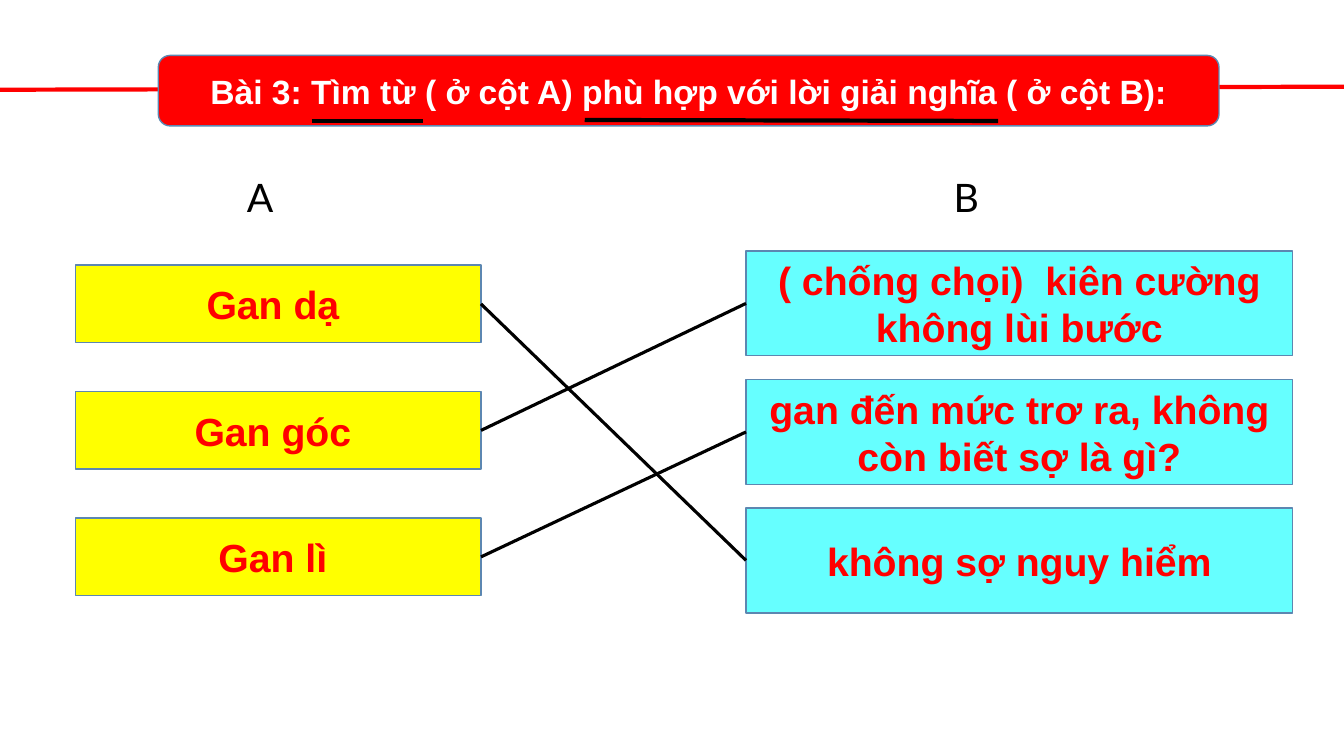
from lxml import etree
from pptx import Presentation
from pptx.dml.color import RGBColor
from pptx.enum.shapes import MSO_CONNECTOR as CONN, MSO_SHAPE as SHAPE
from pptx.enum.text import MSO_ANCHOR as ANCHOR, PP_ALIGN as ALIGN
from pptx.oxml.ns import qn
from pptx.util import Inches, Pt

RED, YELLOW, CYAN = "FF0000", "FFFF00", "66FFFF"
BLACK, WHITE, BORDER = "000000", "FFFFFF", "5C87B1"
RIGHT_SIDE, LEFT_SIDE = 3, 1


def rgb(value):
    return RGBColor.from_string(value)


class Board:
    """Draws on one slide; lengths are percentages of its width and height."""

    def __init__(self, prs):
        self.width, self.height = prs.slide_width, prs.slide_height
        self.shapes = prs.slides.add_slide(prs.slide_layouts[6]).shapes

    def x(self, share):
        return round(self.width * share / 100)

    def y(self, share):
        return round(self.height * share / 100)

    def area(self, left, top, width, height):
        return self.x(left), self.y(top), self.x(width), self.y(height)

    def set_text(self, sp, text, size, color, font="Arial", bold=True, align=ALIGN.CENTER):
        tf = sp.text_frame
        tf.word_wrap = True
        p = tf.paragraphs[0]
        p.text = text
        p.alignment = align
        p.font.name, p.font.size, p.font.bold = font, Pt(size), bold
        p.font.color.rgb = rgb(color)

    def box(self, area, fill, text, size=28, color=RED, kind=SHAPE.RECTANGLE):
        sp = self.shapes.add_shape(kind, *self.area(*area))
        sp.shadow.inherit = False
        sp.fill.solid()
        sp.fill.fore_color.rgb = rgb(fill)
        sp.line.color.rgb = rgb(BORDER)
        sp.line.width = Pt(1)
        sp.text_frame.vertical_anchor = ANCHOR.MIDDLE
        self.set_text(sp, text, size, color)
        return sp

    def label(self, area, text):
        sp = self.shapes.add_textbox(*self.area(*area))
        self.set_text(sp, text, 28, BLACK, "Lato", False, ALIGN.LEFT)

    def line(self, x1, y1, x2, y2, color=BLACK, width=3):
        sp = self.shapes.add_connector(
            CONN.STRAIGHT, self.x(x1), self.y(y1), self.x(x2), self.y(y2))
        sp.line.color.rgb = rgb(color)
        sp.line.width = Pt(width)
        etree.SubElement(sp._element.spPr, qn("a:effectLst"))
        return sp

    def link(self, word, meaning):
        sp = self.line(0, 0, 0, 0, width=2.25)
        sp.begin_connect(word, RIGHT_SIDE)
        sp.end_connect(meaning, LEFT_SIDE)

    def column(self, left, top, width, height, pitch, fill, texts):
        return [self.box((left, top + i * pitch, width, height), fill, text)
                for i, text in enumerate(texts)]


def main():
    prs = Presentation()
    prs.slide_width, prs.slide_height = Inches(13.33), Inches(7.5)
    board = Board(prs)

    # Title banner on a red line, with key words underlined
    board.line(0, 11.87, 100, 11.47, RED)
    board.box((11.78, 7.33, 78.92, 9.33), RED,
              "Bài 3: Tìm từ ( ở cột A) phù hợp với lời giải nghĩa ( ở cột B):",
              24, WHITE, SHAPE.ROUNDED_RECTANGLE)
    board.line(23.18, 16, 31.51, 16)
    board.line(43.51, 15.87, 74.27, 16)

    # Column headings
    for left, heading in ((17.63, "A"), (70.22, "B")):
        board.label((left, 22.27, 9.75, 7.6), heading)

    # Words and their meanings
    words = board.column(5.63, 35.07, 30.16, 10.27, 16.73, YELLOW,
                         ["Gan dạ ", "Gan góc ", "Gan lì "])
    meanings = board.column(55.51, 33.2, 40.66, 13.87, 17, CYAN,
                            ["( chống chọi)  kiên cường không lùi bước",
                             "gan đến mức trơ ra, không còn biết sợ là gì?",
                             "không sợ nguy hiểm"])

    # Matching lines
    for word, answer in zip(words, (2, 0, 1)):
        board.link(word, meanings[answer])

    prs.save("out.pptx")


if __name__ == "__main__":
    main()
